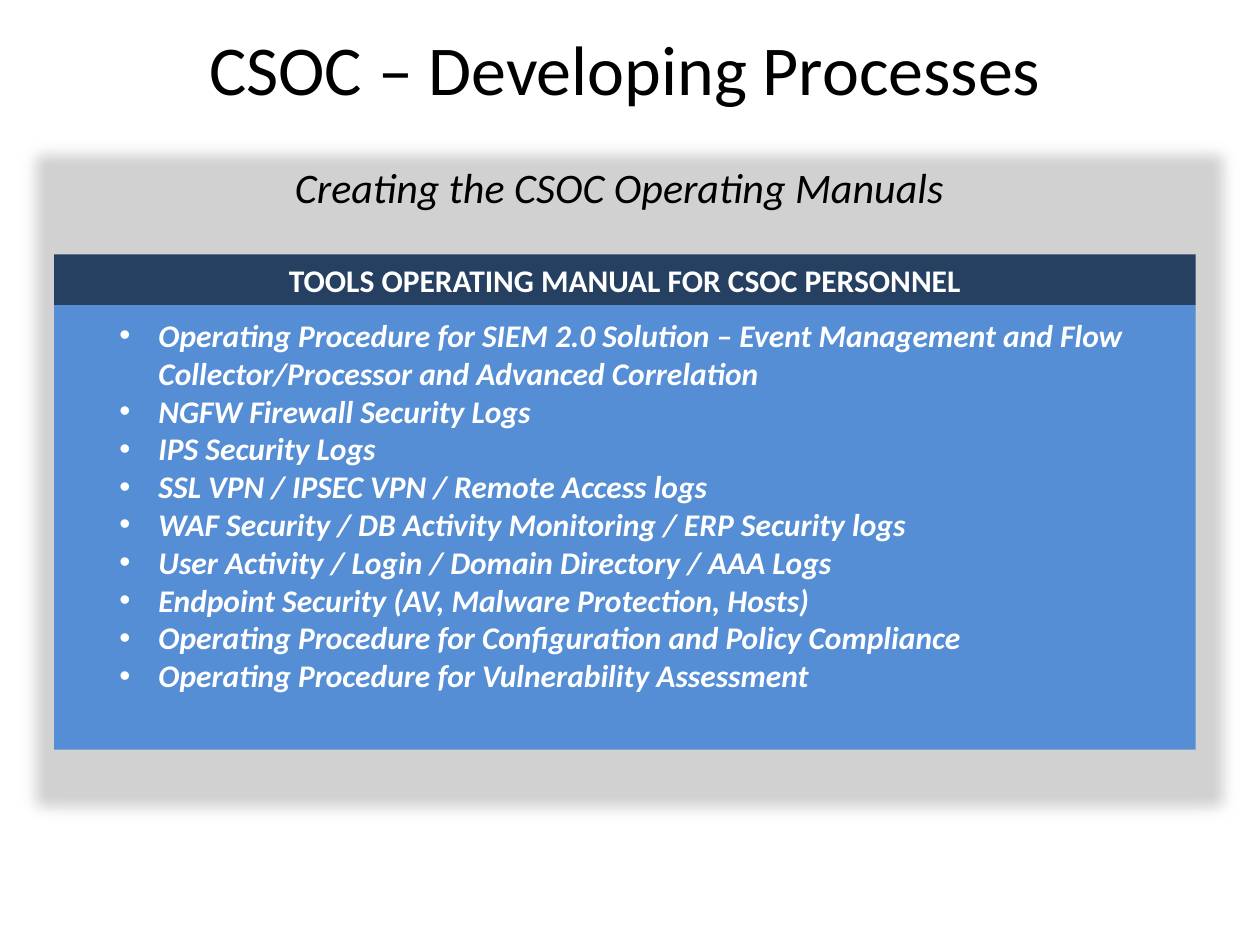
from lxml.etree import SubElement
from pptx import Presentation
from pptx.dml.color import RGBColor
from pptx.enum.shapes import MSO_SHAPE
from pptx.enum.text import MSO_ANCHOR, PP_ALIGN
from pptx.oxml.ns import qn
from pptx.util import Inches, Pt

COLORS = {
    "panel": "D1D1D1",
    "body": "558ED5",
    "header": "254061",
    "light": "FFFFFF",
    "dark": "000000",
}

presentation = Presentation()
presentation.slide_width = Inches(10)
presentation.slide_height = Inches(7.5)
slide = presentation.slides.add_slide(presentation.slide_layouts[6])

# Grid of 100 columns by 75 rows
COLUMN = presentation.slide_width / 100
ROW = presentation.slide_height / 75
BULLET_INDENT = 3.1 * COLUMN
SOFT_EDGE = 1.4 * COLUMN


def grid_box(left, top, width, height):
    return [int(n) for n in (left * COLUMN, top * ROW, width * COLUMN, height * ROW)]


def write_text(shape, *lines, size, color, bold=False, italic=False,
               align=PP_ALIGN.CENTER, anchor=MSO_ANCHOR.TOP, bullet=None):
    frame = shape.text_frame
    frame.word_wrap = True
    frame.vertical_anchor = anchor
    frame.text = "\n".join(lines)
    for paragraph in frame.paragraphs:
        paragraph.alignment = align
        if bullet:
            properties = paragraph._p.get_or_add_pPr()
            properties.set("marL", str(int(BULLET_INDENT)))
            properties.set("indent", str(-int(BULLET_INDENT)))
            SubElement(properties, qn("a:buFont"), typeface="Arial")
            SubElement(properties, qn("a:buChar"), char=bullet)
        for run in paragraph.runs:
            font = run.font
            font.name, font.size = "Calibri", Pt(size)
            font.bold, font.italic = bold, italic
            font.color.rgb = RGBColor.from_string(COLORS[color])


# Panel, list background and header band
bands = {}
for name, box in {
    "panel": (1.2, 10.7, 97.6, 55.1),
    "body": (4.3, 24.2, 90.6, 35.3),
    "header": (4.3, 20.2, 90.6, 4),
}.items():
    band = slide.shapes.add_shape(MSO_SHAPE.RECTANGLE, *grid_box(*box))
    band.shadow.inherit = False
    band.fill.solid()
    band.fill.fore_color.rgb = RGBColor.from_string(COLORS[name])
    band.line.fill.background()
    bands[name] = band

# Feathered border of the panel
effects = bands["panel"]._element.spPr.find(qn("a:effectLst"))
SubElement(effects, qn("a:softEdge"), rad=str(int(SOFT_EDGE)))

write_text(bands["header"], "TOOLS OPERATING MANUAL FOR CSOC PERSONNEL",
           size=18, color="light", bold=True, anchor=MSO_ANCHOR.MIDDLE)

# Procedures covered by the manual
procedures = slide.shapes.add_textbox(*grid_box(8.5, 24.6, 81.7, 34.3))
write_text(
    procedures,
    "Operating Procedure for SIEM 2.0 Solution – Event Management and Flow "
    "Collector/Processor and Advanced Correlation",
    "NGFW Firewall Security Logs",
    "IPS Security Logs",
    "SSL VPN / IPSEC VPN / Remote Access logs",
    "WAF Security / DB Activity Monitoring / ERP Security logs",
    "User Activity / Login / Domain Directory / AAA Logs",
    "Endpoint Security (AV, Malware Protection, Hosts)",
    "Operating Procedure for Configuration and Policy Compliance",
    "Operating Procedure for Vulnerability Assessment",
    size=18, color="light", bold=True, italic=True,
    align=PP_ALIGN.LEFT, bullet="•",
)

# Title and subtitle
title = slide.shapes.add_textbox(*grid_box(4.3, 1.4, 90.6, 7.9))
write_text(title, "CSOC – Developing Processes",
           size=40, color="dark", anchor=MSO_ANCHOR.MIDDLE)
subtitle = slide.shapes.add_textbox(*grid_box(3.5, 12.3, 91.3, 6.1))
write_text(subtitle, "Creating the CSOC Operating Manuals",
           size=24, color="dark", italic=True)

presentation.save("out.pptx")
